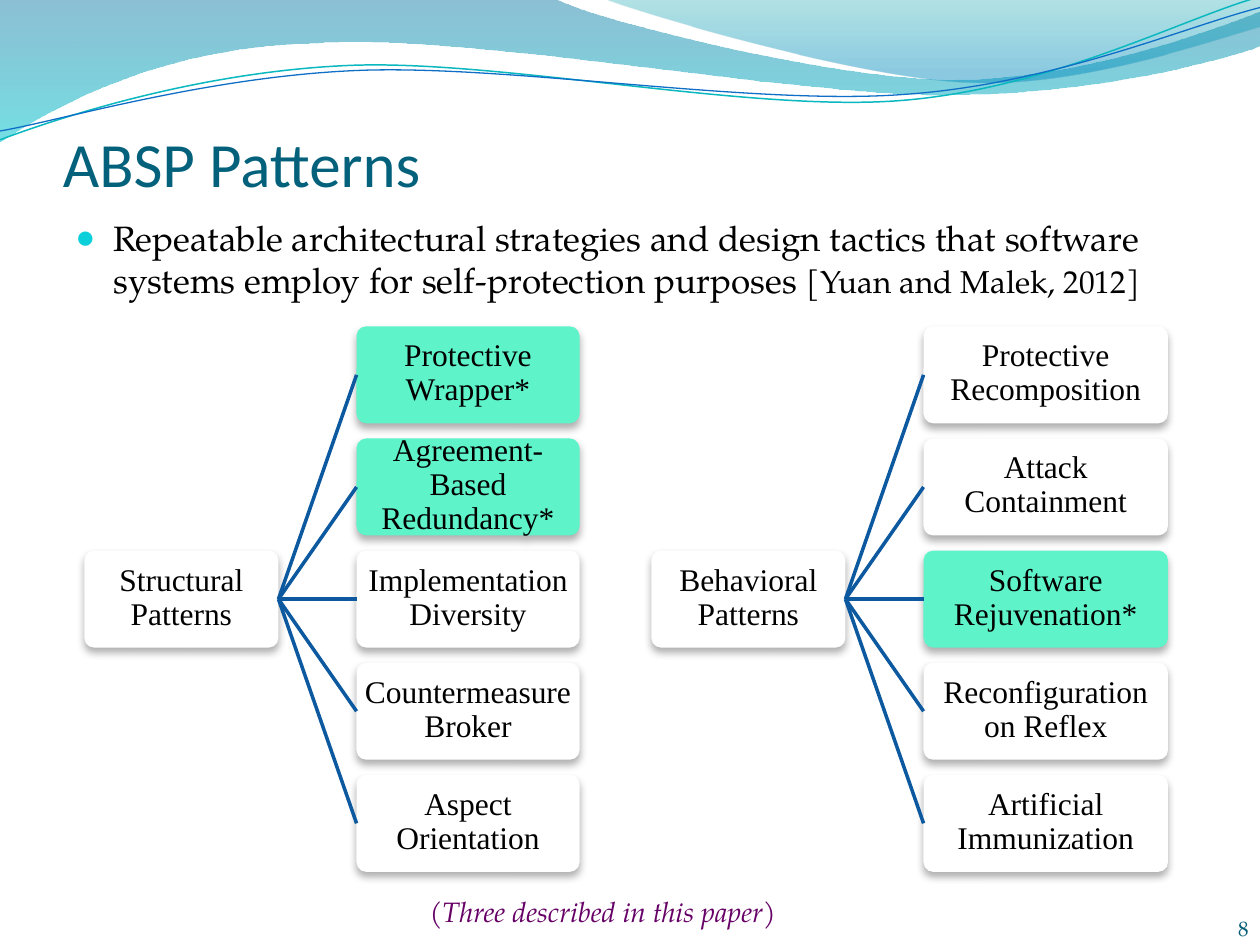
import pptx
import pptx.dml.color
import pptx.enum.shapes
import pptx.enum.text
import pptx.oxml
import pptx.oxml.ns
import pptx.util
from lxml import etree
from pptx.util import Inches

RGBColor = pptx.dml.color.RGBColor
ALIGN = pptx.enum.text.PP_ALIGN
ANCHOR = pptx.enum.text.MSO_ANCHOR
qn = pptx.oxml.ns.qn

WHITE = RGBColor(0xFF, 0xFF, 0xFF)
BLACK = RGBColor(0x00, 0x00, 0x00)
MINT = RGBColor(0x5F, 0xF3, 0xCA)
BRANCH_BLUE = RGBColor(0x0C, 0x59, 0x9F)
TITLE_TEAL = RGBColor(0x04, 0x61, 0x7B)
NUMBER_TEAL = RGBColor(0x04, 0x5D, 0x75)
PURPLE = RGBColor(0x66, 0x00, 0x66)
WAVE_BLUE = RGBColor(0x00, 0x74, 0xA1)
WAVE_CYAN = RGBColor(0x00, 0xC6, 0xCF)
CREST_TEAL = RGBColor(0x00, 0xA1, 0xA9)
CREST_BLUE = RGBColor(0x00, 0x8B, 0xBF)
THREAD_TEAL = RGBColor(0x0A, 0xB8, 0xBF)
THREAD_BLUE = RGBColor(0x0F, 0x6F, 0xC6)
SERIF = "TeX Gyre Pagella"

deck = pptx.Presentation()
deck.slide_width, deck.slide_height = Inches(10), Inches(7.5)
slide = deck.slides.add_slide(deck.slide_layouts[6])
shapes = slide.shapes


def write(frame, text, size=18, font=SERIF, color=BLACK, italic=False, align=ALIGN.LEFT,
          anchor=ANCHOR.TOP, margins=(0.1, 0.05, 0.1, 0.05), line_spacing=None):
    """Add a run to the first paragraph of a frame and format both."""
    frame.word_wrap = True
    frame.vertical_anchor = anchor
    frame.margin_left, frame.margin_top, frame.margin_right, frame.margin_bottom = map(Inches, margins)
    paragraph = frame.paragraphs[0]
    paragraph.alignment = align
    paragraph.line_spacing = line_spacing
    run = paragraph.add_run()
    run.text = text
    run.font.size = pptx.util.Pt(size)
    run.font.name = font
    run.font.italic = italic
    run.font.color.rgb = color
    return paragraph


def draw_curve(pieces, closed):
    """Each piece is an end point (x, y) or a Bezier curve (x1, y1, x2, y2, x, y)."""
    points = [(Inches(piece[i]), Inches(piece[i + 1])) for piece in pieces for i in range(0, len(piece), 2)]
    builder = shapes.build_freeform(*points[0])
    builder.add_line_segments(points[1:], close=closed)
    curve = builder.convert_to_shape()
    curve.shadow.inherit = False
    # Fold the three points of each Bezier piece into one curve segment
    segments = iter(list(curve._element.iter(qn("a:lnTo"))))
    for piece in pieces[1:]:
        lines = [next(segments) for _ in range(len(piece) // 2)]
        if len(lines) == 3:
            bezier = etree.Element(qn("a:cubicBezTo"))
            lines[0].addprevious(bezier)
            for line in lines:
                bezier.append(line[0])
                line.getparent().remove(line)
    return curve


# Translucent waves: outline, then gradient stops as (position, colour, opacity in percent)
waves = [
    ([(0, 0), (4.4, -0.01), (4.76, 0.17, 6.64, 0.63, 7.58, 0.63), (8.53, 0.63, 9.58, 0.26, 10, 0.09),
      (10.01, 0.36), (9.83, 0.44, 8.7, 0.76, 7.46, 0.75), (6.22, 0.75, 3.82, 0.28, 2.57, 0.34),
      (1.29, 0.36, 0.46, 0.83, -0.01, 1.13)],
     [(0, WAVE_BLUE, 45), (1, WAVE_CYAN, 55)]),
    ([(4.79, -0.01), (5.09, 0.11, 6.82, 0.62, 7.69, 0.65), (8.56, 0.69, 9.61, 0.32, 10, 0.21), (10, 0)],
     [(0, CREST_TEAL, 30), (0.8, CREST_BLUE, 45)]),
]
for outline, stops in waves:
    wave = draw_curve(outline, closed=True)
    wave.line.fill.background()
    wave.fill.gradient()
    wave.fill.gradient_angle = 270
    for stop, (position, color, opacity) in zip(wave.fill.gradient_stops, stops):
        stop.position = position
        stop.color.rgb = color
    colors = wave.fill._xPr.iter(qn("a:srgbClr"))
    for color_element, (position, color, opacity) in zip(colors, stops):
        etree.SubElement(color_element, qn("a:alpha"), val=str(opacity * 1000))

# Thin threads along the waves
threads = [
    ([(0, 1.11), (0.48, 0.93, 1.58, 0.57, 2.77, 0.52), (3.95, 0.47, 5.93, 0.89, 7.13, 0.8),
      (8.33, 0.71, 9.38, 0.15, 9.98, -0.02)], THREAD_TEAL, 0.85),
    ([(0, 1.04), (0.47, 0.96, 1.64, 0.61, 2.83, 0.56), (4.03, 0.51, 5.97, 0.84, 7.17, 0.75),
      (8.36, 0.67, 9.41, 0.21, 10, 0.06)], THREAD_BLUE, 0.75),
]
for course, color, width in threads:
    thread = draw_curve(course, closed=False)
    thread.fill.background()
    thread.line.color.rgb = color
    thread.line.width = pptx.util.Pt(width)

# Title
title = shapes.add_textbox(Inches(0.5), Inches(0.42), Inches(9), Inches(1.17))
write(title.text_frame, "ABSP Patterns", size=36, font="Calibri", color=TITLE_TEAL,
      anchor=ANCHOR.BOTTOM, margins=(0, 0.05, 0, 0))

# Bulleted definition with its citation
definition = shapes.add_textbox(Inches(0.5), Inches(1.67), Inches(9), Inches(5.25))
write(definition.text_frame, "Repeatable architectural strategies and design tactics that software "
      "systems employ for self-protection purposes ", size=20)
bullet = write(definition.text_frame, "[Yuan and Malek, 2012]", size=18)
bullet.space_before = pptx.util.Pt(4)
bullet_format = bullet._p.get_or_add_pPr()
bullet_format.set("marL", str(Inches(0.3)))
bullet_format.set("indent", str(Inches(-0.3)))
bullet_color = etree.SubElement(bullet_format, qn("a:buClr"))
etree.SubElement(bullet_color, qn("a:srgbClr"), val="0BD0D9")
etree.SubElement(bullet_format, qn("a:buSzPct"), val="95000")
etree.SubElement(bullet_format, qn("a:buFont"), typeface="Times New Roman")
etree.SubElement(bullet_format, qn("a:buChar"), char="●")

# Pattern trees: left edge, width of the pattern cards, root, patterns
trees = [
    (0.67, 1.77, "Structural Patterns",
     ["Protective Wrapper*", "Agreement-Based Redundancy*", "Implementation Diversity",
      "Countermeasure Broker", "Aspect Orientation"]),
    (5.17, 1.94, "Behavioral Patterns",
     ["Protective Recomposition", "Attack Containment", "Software Rejuvenation*",
      "Reconfiguration on Reflex", "Artificial Immunization"]),
]
CARD_TOP, CARD_HEIGHT, CARD_PITCH = 2.59, 0.77, 0.89
ROOT_WIDTH, BRANCH_WIDTH = 1.54, 0.62
for left, pattern_width, root_name, patterns in trees:
    pattern_left = left + ROOT_WIDTH + BRANCH_WIDTH
    cards = [(root_name, left, 2, ROOT_WIDTH)]
    cards += [(name, pattern_left, row, pattern_width) for row, name in enumerate(patterns)]
    root = None
    for name, card_left, row, width in cards:
        card = shapes.add_shape(
            pptx.enum.shapes.MSO_SHAPE.ROUNDED_RECTANGLE, Inches(card_left),
            Inches(CARD_TOP + row * CARD_PITCH), Inches(width), Inches(CARD_HEIGHT))
        card.adjustments[0] = 0.1
        card.fill.solid()
        card.fill.fore_color.rgb = MINT if name.endswith("*") else WHITE
        card.line.fill.background()
        card.shadow.inherit = False
        effects = card._element.spPr.find(qn("a:effectLst"))
        shadow = etree.SubElement(effects, qn("a:outerShdw"), blurRad=str(pptx.util.Pt(4.5)),
                                  dist=str(pptx.util.Pt(3)), dir="5400000", rotWithShape="0")
        shade = etree.SubElement(shadow, qn("a:srgbClr"), val="5A5A5A")
        etree.SubElement(shade, qn("a:alpha"), val="48000")
        write(card.text_frame, name, font="Times New Roman", align=ALIGN.CENTER,
              anchor=ANCHOR.MIDDLE, margins=(0.01, 0.01, 0.01, 0.03), line_spacing=0.9)
        if root is None:
            root = card
            continue
        branch = shapes.add_connector(pptx.enum.shapes.MSO_CONNECTOR.STRAIGHT, 0, 0, 0, 0)
        branch.begin_connect(root, 3)
        branch.end_connect(card, 1)
        branch.line.color.rgb = BRANCH_BLUE
        branch.line.width = pptx.util.Pt(2)
        etree.SubElement(branch._element.spPr, qn("a:effectLst"))

# Remark on the starred patterns and the slide number
remark = shapes.add_textbox(Inches(2.08), Inches(7.05), Inches(5.41), Inches(0.37))
write(remark.text_frame, "(Three described in this paper)", size=16, color=PURPLE,
      italic=True, align=ALIGN.CENTER)
number = shapes.add_textbox(Inches(9.08), Inches(7.07), Inches(0.83), Inches(0.4))
write(number.text_frame, "8", size=12, color=NUMBER_TEAL, align=ALIGN.RIGHT,
      anchor=ANCHOR.BOTTOM, margins=(0,) * 4)

deck.save("out.pptx")
